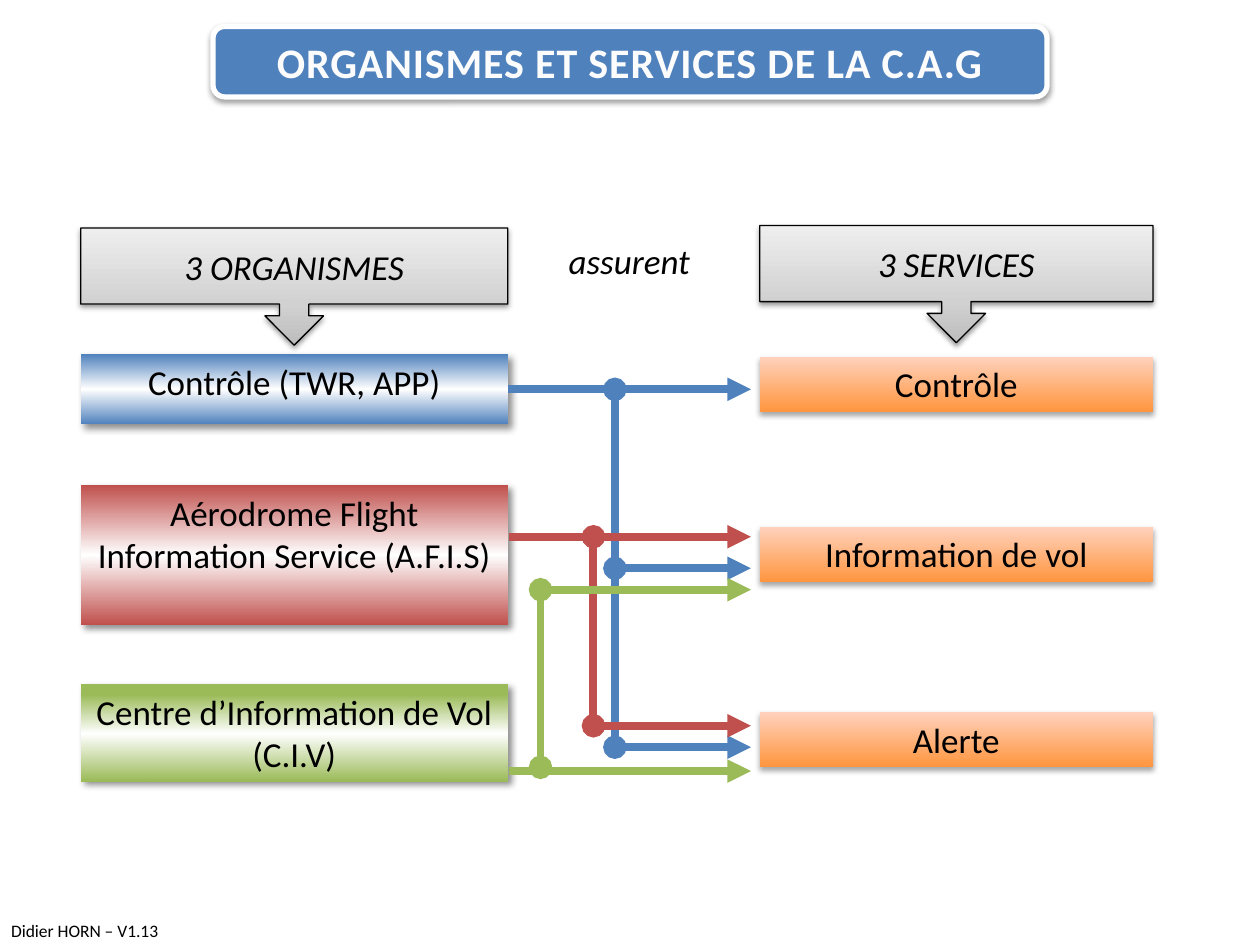
from dataclasses import dataclass
from typing import Optional

from lxml.etree import SubElement
from pptx import Presentation
from pptx.dml.color import RGBColor
from pptx.enum.shapes import MSO_CONNECTOR, MSO_SHAPE
from pptx.enum.text import MSO_ANCHOR, PP_ALIGN
from pptx.oxml.ns import qn
from pptx.util import Pt

PX = 9144  # EMU per px, 100 px to the inch


@dataclass(frozen=True)
class Theme:
    font: str = "Calibri"
    title_size: int = 24
    body_size: int = 20
    footer_size: int = 10
    line_width: float = 4.5
    text: str = "000000"
    title_text: str = "FCFCFD"
    white: str = "FFFFFF"
    blue: str = "4F81BD"
    red: str = "C0504D"
    green: str = "9BBB59"
    orange: tuple = ((0, "FF953E"), (100, "FFD2BD"))
    grey: tuple = ((0, "BDBDBD"), (35, "D1D1D1"), (100, "EEEEEE"))


T = Theme()


@dataclass(frozen=True)
class Shadow:
    alpha: int
    blur: float
    dist: float
    angle: int


ORGANISM_SHADOW = Shadow(43, 4, 3, 45)
SERVICE_SHADOW = Shadow(35, 3.1, 1.8, 90)
RAISED_SHADOW = Shadow(38, 3.1, 1.6, 90)


@dataclass(frozen=True)
class Box:
    text: str
    x: int
    y: int
    w: int
    h: int
    shadow: Shadow
    stops: tuple = ()
    fill: str = ""
    angle: int = 270
    shape: MSO_SHAPE = MSO_SHAPE.RECTANGLE
    line: str = ""
    line_width: float = 0.75
    size: int = T.body_size
    color: str = T.text
    bold: bool = False
    italic: bool = False
    anchor: MSO_ANCHOR = MSO_ANCHOR.TOP


@dataclass(frozen=True)
class Link:
    color: str
    start: tuple
    end: tuple
    head: str = ""
    tail: str = ""
    source: Optional[str] = None


def mirrored(color: str, first: int = 0, middle: int = 50) -> tuple:
    return (first, color), (middle, T.white), (100, color)


def organism(text: str, y: int, h: int, stops: tuple) -> Box:
    return Box(text, 64, y, 339, h, ORGANISM_SHADOW, stops, angle=90)


def service(text: str, y: int) -> Box:
    return Box(text, 603, y, 312, 44, SERVICE_SHADOW, T.orange)


def heading(text: str, x: int, y: int, w: int) -> Box:
    return Box(text, x, y, w, 93, RAISED_SHADOW, T.grey, line=T.text, italic=True,
               shape=MSO_SHAPE.DOWN_ARROW_CALLOUT, anchor=MSO_ANCHOR.MIDDLE)


CONTROL = "Contrôle (TWR, APP)"
BOXES = (
    organism(CONTROL, 281, 56, mirrored(T.blue)),
    organism("Aérodrome Flight Information Service (A.F.I.S)", 385, 111, mirrored(T.red)),
    organism("Centre d’Information de Vol (C.I.V)", 543, 77, mirrored(T.green, 11, 51)),
    service("Contrôle", 283),
    service("Alerte", 565),
    service("Information de vol", 418),
)
HEADINGS = (
    heading("3 ORGANISMES", 64, 181, 339),
    heading("3 SERVICES", 603, 179, 312),
)
TITLE = Box("ORGANISMES ET SERVICES DE LA C.A.G", 169, 21, 662, 56, RAISED_SHADOW,
            fill=T.blue, shape=MSO_SHAPE.ROUNDED_RECTANGLE, line=T.white, line_width=3,
            size=T.title_size, color=T.title_text, bold=True)

LEFT, RIGHT = 404, 596  # ends of the horizontal lines
BLUE_X, RED_X, GREEN_X = 488, 471, 429  # vertical branches
LINKS = (
    Link(T.blue, (403, 309), (RIGHT, 309), tail="triangle", source=CONTROL),
    Link(T.blue, (BLUE_X, 309), (BLUE_X, 451), head="oval"),
    Link(T.blue, (BLUE_X, 451), (RIGHT, 451), "oval", "triangle"),
    Link(T.blue, (BLUE_X, 593), (RIGHT, 593), "oval", "triangle"),
    Link(T.blue, (BLUE_X, 451), (BLUE_X, 593)),
    Link(T.red, (LEFT, 426), (RIGHT, 426), tail="triangle"),
    Link(T.red, (RED_X, 576), (RIGHT, 576), tail="triangle"),
    Link(T.red, (RED_X, 426), (RED_X, 576), "oval", "oval"),
    Link(T.green, (LEFT, 612), (RIGHT, 612), tail="triangle"),
    Link(T.green, (GREEN_X, 468), (RIGHT, 468), tail="triangle"),
    Link(T.green, (GREEN_X, 609), (GREEN_X, 468), "oval", "oval"),
)


def write(sp, text: str, size: int, color: str = T.text, bold: bool = False,
          italic: bool = False, align: PP_ALIGN = PP_ALIGN.CENTER):
    p = sp.text_frame.paragraphs[0]
    p.text, p.alignment = text, align
    p.font.name, p.font.size = T.font, Pt(size)
    p.font.bold, p.font.italic = bold, italic
    p.font.color.rgb = RGBColor.from_string(color)
    return p


def add_color(parent, color: str):
    return SubElement(parent, qn("a:srgbClr"), val=color)


def set_gradient(sp, stops: tuple, angle: int) -> None:
    """Fill with any number of stops; the angle runs clockwise."""
    sp.fill.gradient()
    sp.fill.gradient_angle = 360 - angle
    gs_lst = next(sp.element.spPr.iter(qn("a:gsLst")))
    for gs in list(gs_lst):
        gs_lst.remove(gs)
    for pos, color in stops:
        add_color(SubElement(gs_lst, qn("a:gs"), pos=str(pos * 1000)), color)


def set_shadow(sp, shadow: Shadow) -> None:
    sp.shadow.inherit = False
    effects = sp.element.spPr.find(qn("a:effectLst"))
    outer = SubElement(effects, qn("a:outerShdw"), blurRad=str(Pt(shadow.blur)),
                       dist=str(Pt(shadow.dist)), dir=str(shadow.angle * 60000),
                       algn="ctr", rotWithShape="0")
    SubElement(add_color(outer, T.text), qn("a:alpha"), val=str(shadow.alpha * 1000))


def add_box(shapes, box: Box):
    sp = shapes.add_shape(box.shape, *(v * PX for v in (box.x, box.y, box.w, box.h)))
    if box.stops:
        set_gradient(sp, box.stops, box.angle)
    else:
        sp.fill.solid()
        sp.fill.fore_color.rgb = RGBColor.from_string(box.fill)
    if box.line:
        sp.line.color.rgb = RGBColor.from_string(box.line)
        sp.line.width = Pt(box.line_width)
    else:
        sp.line.fill.background()
    set_shadow(sp, box.shadow)
    sp.text_frame.word_wrap = True
    sp.text_frame.vertical_anchor = box.anchor
    write(sp, box.text, box.size, box.color, box.bold, box.italic)
    return sp


def add_link(shapes, link: Link, sources: dict) -> None:
    cx = shapes.add_connector(MSO_CONNECTOR.STRAIGHT,
                              *(v * PX for v in link.start + link.end))
    if link.source:
        cx.begin_connect(sources[link.source], 3)
    cx.line.color.rgb = RGBColor.from_string(link.color)
    cx.line.width = Pt(T.line_width)
    ln = cx.line._get_or_add_ln()
    for tag, kind in (("a:headEnd", link.head), ("a:tailEnd", link.tail)):
        if kind:
            SubElement(ln, qn(tag), type=kind)
    SubElement(cx.element.spPr, qn("a:effectLst"))


def main() -> None:
    prs = Presentation()
    prs.slide_width, prs.slide_height = 1000 * PX, 750 * PX
    shapes = prs.slides.add_slide(prs.slide_layouts[6]).shapes

    footer = shapes.add_textbox(-1 * PX, 725 * PX, 150 * PX, 27 * PX)
    footer.text_frame.word_wrap = False
    write(footer, "Didier HORN – V1.13 ©", T.footer_size, align=PP_ALIGN.LEFT)
    verb = shapes.add_textbox(383 * PX, 185 * PX, 233 * PX, 44 * PX)
    verb.text_frame.word_wrap = True
    write(verb, "assurent", T.body_size, italic=True)

    sources = {box.text: add_box(shapes, box) for box in BOXES}
    for link in LINKS:
        add_link(shapes, link, sources)
    for box in HEADINGS:
        add_box(shapes, box)
    title = add_box(shapes, TITLE)
    for r in title.text_frame.paragraphs[0].runs:
        r.font._element.set("spc", "50")
    prs.save("out.pptx")


if __name__ == "__main__":
    main()
